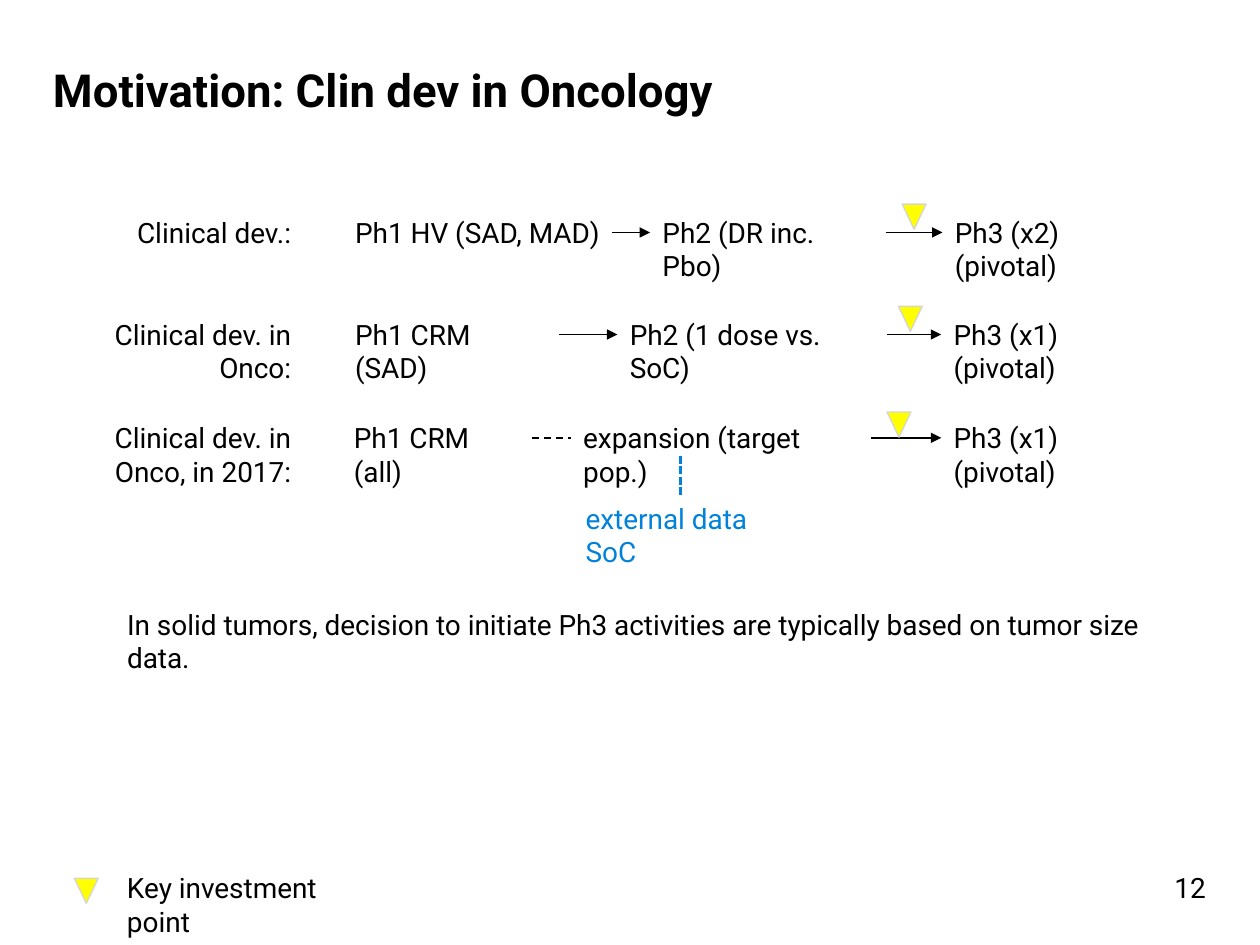
"""Build the slide on clinical development in oncology."""
from dataclasses import dataclass

from lxml import etree
from pptx import Presentation
from pptx.dml.color import RGBColor
from pptx.enum.dml import MSO_LINE
from pptx.enum.shapes import MSO_CONNECTOR, MSO_SHAPE
from pptx.enum.text import MSO_ANCHOR, MSO_AUTO_SIZE, PP_ALIGN
from pptx.oxml.ns import qn
from pptx.util import Inches, Pt

BLACK = RGBColor(0x00, 0x00, 0x00)
BLUE = RGBColor(0x00, 0x82, 0xDA)
YELLOW = RGBColor(0xFF, 0xFF, 0x00)
GREY = RGBColor(0xD5, 0xD5, 0xD5)
FONT = "Roboto"
LEFT, RIGHT = PP_ALIGN.LEFT, PP_ALIGN.RIGHT
TOP, FIXED = MSO_ANCHOR.TOP, MSO_AUTO_SIZE.NONE
DASH, DOTS = MSO_LINE.DASH, MSO_LINE.SQUARE_DOT
STRAIGHT, TRIANGLE = MSO_CONNECTOR.STRAIGHT, MSO_SHAPE.ISOSCELES_TRIANGLE
HIGH = 0.37
PAD = 0.1


@dataclass
class Step:
    text: str
    left: float
    width: float


@dataclass
class Track:
    label: str
    top: float
    steps: list[Step]
    mark: tuple[float, float]
    first_dash: bool = False


TRACKS = [
    Track("Clinical dev.:", 1.66,
          [Step("Ph1 HV (SAD, MAD)", 2.72, 2.14),
           Step("Ph2 (DR inc. Pbo)", 5.16, 1.87),
           Step("Ph3 (x2) (pivotal)", 7.48, 1.81)], (7.16, 1.62)),
    Track("Clinical dev. in Onco:", 2.47,
          [Step("Ph1 CRM (SAD)", 2.72, 1.72),
           Step("Ph2 (1 dose vs. SoC)", 4.9, 2.14),
           Step("Ph3 (x1) (pivotal)", 7.47, 1.81)], (7.13, 2.43)),
    Track("Clinical dev. in Onco, in 2017:", 3.29,
          [Step("Ph1 CRM (all)", 2.71, 1.51),
           Step("expansion (target pop.)", 4.53, 2.38),
           Step("Ph3 (x1) (pivotal)", 7.47, 1.81)], (7.04, 3.27), True),
]


def write(shape, text: str, *, size: float = 16, color: RGBColor = BLACK,
          bold: bool = False, align=LEFT, pad: float = PAD) -> None:
    """Put formatted text in a shape."""
    frame = shape.text_frame
    frame.text = text
    frame.word_wrap = True
    frame.auto_size = FIXED
    frame.vertical_anchor = TOP
    frame.margin_left = frame.margin_right = Inches(pad)
    frame.margin_top = frame.margin_bottom = Inches(pad / 2)
    para = frame.paragraphs[0]
    para.alignment = align
    font = para.runs[0].font
    font.name, font.size, font.bold = FONT, Pt(size), bold
    font.color.rgb = color


def add_text(slide, text: str, left: float, top: float, width: float,
             high: float = HIGH, **style) -> None:
    """Add a text box."""
    box = slide.shapes.add_textbox(
        Inches(left), Inches(top), Inches(width), Inches(high))
    write(box, text, **style)


def add_line(slide, start: tuple[float, float], end: tuple[float, float], *,
             color: RGBColor = BLACK, width: float = 1, dash=None,
             arrow: bool = True) -> None:
    """Add a straight line, with an arrowhead if asked."""
    link = slide.shapes.add_connector(
        STRAIGHT, *(Inches(n) for n in start + end))
    link.line.color.rgb = color
    link.line.width = Pt(width)
    if dash is not None:
        link.line.dash_style = dash
    props = link.line._get_or_add_ln()
    if arrow:
        etree.SubElement(props, qn("a:tailEnd"), type="triangle")
    etree.SubElement(props.getparent(), qn("a:effectLst"))


def add_mark(slide, left: float, top: float) -> None:
    """Add a triangle that points down."""
    mark = slide.shapes.add_shape(
        TRIANGLE, Inches(left), Inches(top), Inches(0.19), Inches(0.2))
    mark.rotation = 180
    mark.shadow.inherit = False
    mark.fill.solid()
    mark.fill.fore_color.rgb = YELLOW
    mark.line.color.rgb = GREY
    mark.line.width = Pt(0.75)


def add_track(slide, track: Track) -> None:
    """Draw one row of phases with its links."""
    add_text(slide, track.label, 0.28, track.top, 2.13, 0.64, align=RIGHT)
    for step in track.steps:
        add_text(slide, step.text, step.left, track.top, step.width)
    mid = track.top + HIGH / 2
    for i, (step, after) in enumerate(zip(track.steps, track.steps[1:])):
        dashed = track.first_dash and i == 0
        add_line(slide, (step.left + step.width, mid), (after.left, mid),
                 dash=DASH if dashed else None, arrow=not dashed)
    add_mark(slide, *track.mark)


def main() -> None:
    """Build and save the deck."""
    deck = Presentation()
    deck.slide_width, deck.slide_height = Inches(10), Inches(7.5)
    slide = deck.slides.add_slide(deck.slide_layouts[5])
    title = slide.shapes.title
    title.left, title.top = Inches(0.42), Inches(0.49)
    title.width, title.height = Inches(8.06), Inches(1.43)
    write(title, "Motivation: Clin dev in Oncology", size=26, bold=True, pad=0)
    for track in TRACKS:
        add_track(slide, track)
    add_text(slide, "external data SoC", 4.55, 3.93, 1.87, color=BLUE)
    add_line(slide, (5.4, 3.93), (5.4, 3.61), color=BLUE, width=1.5,
             dash=DOTS, arrow=False)
    add_text(slide, "In solid tumors, decision to initiate Ph3 activities are "
             "typically based on tumor size data.", 0.91, 4.77, 8.38)
    add_mark(slide, 0.59, 6.97)
    add_text(slide, "Key investment point", 0.91, 6.86, 2.17)
    add_text(slide, "12", 0.43, 6.91, 9.14, 0.21, align=RIGHT, pad=0)
    deck.save("out.pptx")


if __name__ == "__main__":
    main()
